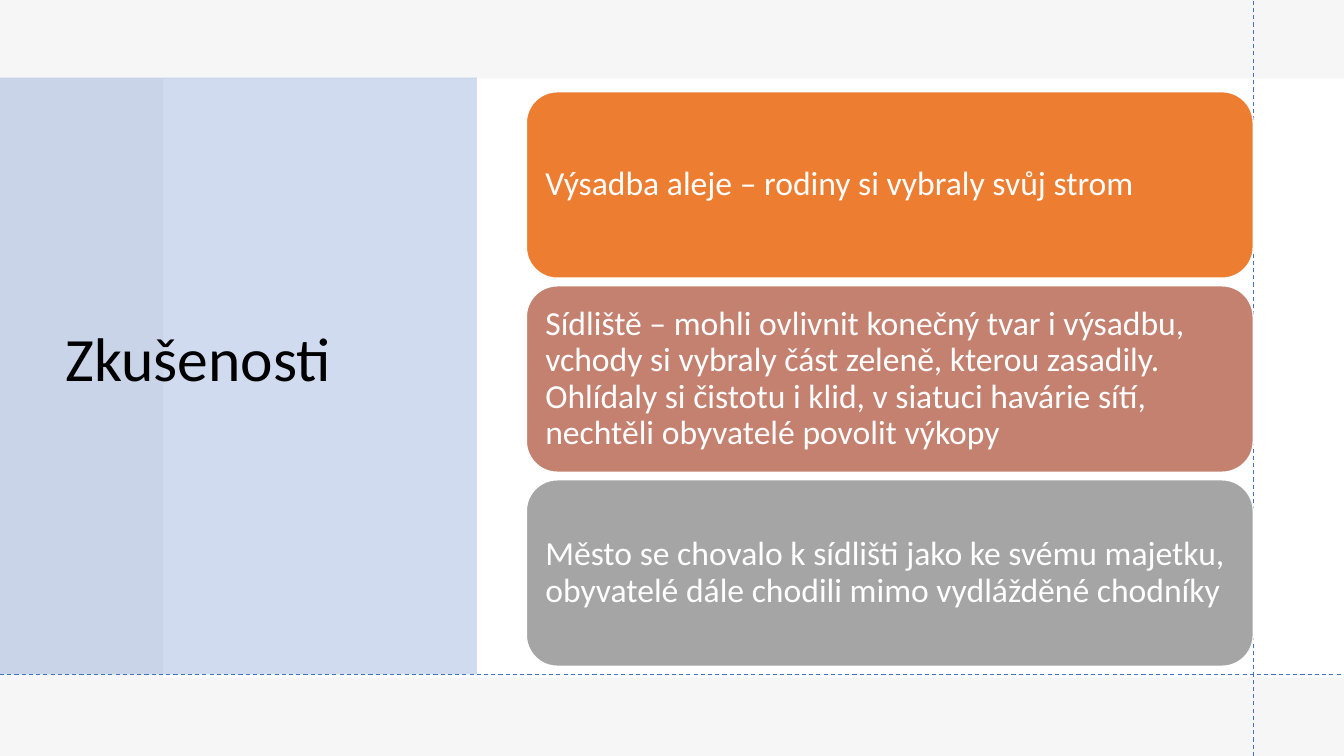
from dataclasses import dataclass

from lxml import etree
from pptx import Presentation
from pptx import util as u
from pptx.dml import color
from pptx.enum import dml, shapes, text
from pptx.oxml import ns
from pptx.shapes.autoshape import Shape
from pptx.slide import Slide
from pptx.text.text import TextFrame


@dataclass(frozen=True)
class Theme:
    font: str = "Calibri"
    title_size: int = 44
    card_size: int = 24
    black: str = "000000"
    white: str = "FFFFFF"
    tint: str = "E7E6E6"
    blue: str = "4472C4"
    orange: str = "ED7D31"
    rose: str = "C48170"
    grey: str = "A5A5A5"


@dataclass(frozen=True)
class Panel:
    left: float
    top: float
    width: float
    height: float
    fill: str
    opacity: int = 100


@dataclass(frozen=True)
class Card:
    wording: str
    fill: str


@dataclass(frozen=True)
class Guide:
    start: tuple[float, float]
    end: tuple[float, float]


THEME = Theme()
WIDTH, HEIGHT = 13.33, 7.5
CARD_LEFT, CARD_TOP, CARD_WIDTH, CARD_HEIGHT = 5.22, 0.91, 7.21, 1.85
CARD_GAP = 0.075
CARD_RIGHT = CARD_LEFT + CARD_WIDTH
GUIDE_Y = 6.69

PANELS = [
    Panel(0, 0, WIDTH, HEIGHT, THEME.white),
    Panel(0, 0, WIDTH, HEIGHT, THEME.tint, 35),
    Panel(1.62, 0.78, WIDTH - 1.62, 5.94, THEME.white),
    Panel(0, 0.77, 4.73, 5.92, THEME.blue, 25),
]
GUIDES = [
    Guide((CARD_RIGHT, HEIGHT), (CARD_RIGHT, 0)),
    Guide((0, GUIDE_Y), (WIDTH, GUIDE_Y)),
]
CARDS = [
    Card("Výsadba aleje – rodiny si vybraly svůj strom", THEME.orange),
    Card("Sídliště – mohli ovlivnit konečný tvar i výsadbu, vchody si vybraly "
         "část zeleně, kterou zasadily. Ohlídaly si čistotu i klid, v siatuci "
         "havárie sítí, nechtěli obyvatelé povolit výkopy", THEME.rose),
    Card("Město se chovalo k sídlišti jako ke svému majetku, obyvatelé dále "
         "chodili mimo vydlážděné chodníky", THEME.grey),
]


def rgb(value: str) -> color.RGBColor:
    return color.RGBColor.from_string(value)


def add_filled(slide: Slide, kind: shapes.MSO_SHAPE, panel: Panel) -> Shape:
    shape = slide.shapes.add_shape(
        kind, u.Inches(panel.left), u.Inches(panel.top),
        u.Inches(panel.width), u.Inches(panel.height))
    shape.shadow.inherit = False
    shape.fill.solid()
    shape.fill.fore_color.rgb = rgb(panel.fill)
    shape.line.fill.background()
    if panel.opacity < 100:
        fill_color = shape.fill._xPr.find(f".//{ns.qn('a:srgbClr')}")
        etree.SubElement(fill_color, ns.qn("a:alpha"), val=str(panel.opacity * 1000))
    return shape


def write(frame: TextFrame, wording: str, size: int, ink: str) -> None:
    frame.word_wrap = True
    frame.vertical_anchor = text.MSO_ANCHOR.MIDDLE
    paragraph = frame.paragraphs[0]
    paragraph.text = wording
    paragraph.alignment = text.PP_ALIGN.LEFT
    paragraph.line_spacing = 0.9
    paragraph.font.name = THEME.font
    paragraph.font.size = u.Pt(size)
    paragraph.font.color.rgb = rgb(ink)


def add_title(slide: Slide, wording: str) -> None:
    box = slide.shapes.add_textbox(
        u.Inches(0.55), u.Inches(0.74), u.Inches(3.95), u.Inches(5.69))
    write(box.text_frame, wording, THEME.title_size, THEME.black)


def add_guide(slide: Slide, guide: Guide) -> None:
    connector = slide.shapes.add_connector(
        shapes.MSO_CONNECTOR.STRAIGHT,
        *(u.Inches(value) for value in guide.start + guide.end))
    connector.line.color.rgb = rgb(THEME.blue)
    connector.line.width = u.Pt(0.75)
    connector.line.dash_style = dml.MSO_LINE.DASH
    etree.SubElement(connector._element.spPr, ns.qn("a:effectLst"))


def add_card(slide: Slide, card: Card, row: int) -> None:
    top = CARD_TOP + row * (CARD_HEIGHT + CARD_GAP)
    shape = add_filled(
        slide, shapes.MSO_SHAPE.ROUNDED_RECTANGLE,
        Panel(CARD_LEFT, top, CARD_WIDTH, CARD_HEIGHT, card.fill))
    shape.line.color.rgb = rgb(THEME.white)
    shape.line.width = u.Pt(1)
    frame = shape.text_frame
    frame.margin_left = frame.margin_right = u.Inches(0.1)
    frame.margin_top = frame.margin_bottom = u.Inches(0.1)
    write(frame, card.wording, THEME.card_size, THEME.white)


def main() -> None:
    presentation = Presentation()
    presentation.slide_width = u.Inches(WIDTH)
    presentation.slide_height = u.Inches(HEIGHT)
    slide = presentation.slides.add_slide(presentation.slide_layouts[6])

    # Backdrop and title panel
    for panel in PANELS:
        add_filled(slide, shapes.MSO_SHAPE.RECTANGLE, panel)
    add_title(slide, "Zkušenosti")

    # Dashed guides behind the cards
    for guide in GUIDES:
        add_guide(slide, guide)

    # Stacked experience cards
    for row, card in enumerate(CARDS):
        add_card(slide, card, row)

    presentation.save("out.pptx")


if __name__ == "__main__":
    main()
